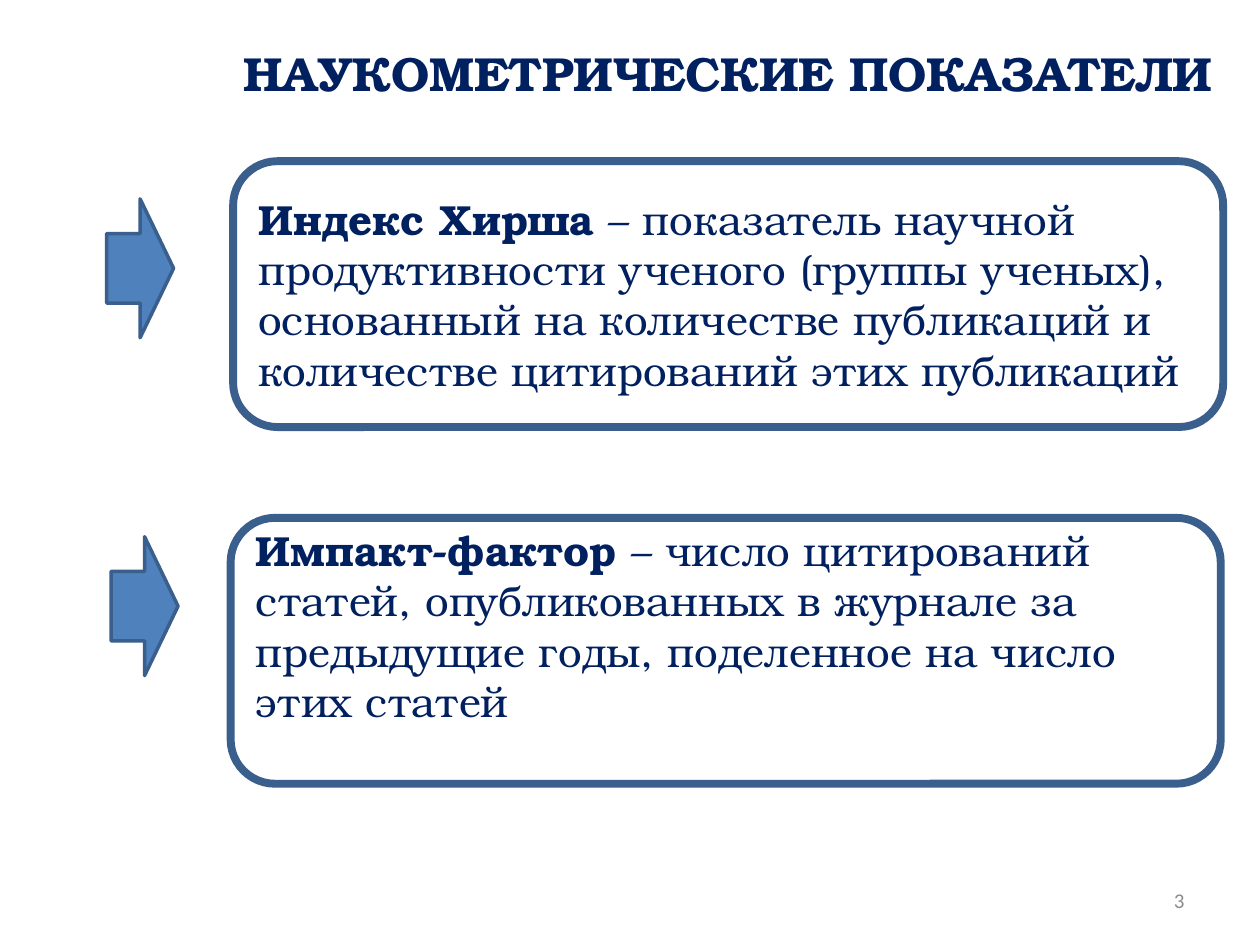
from pptx import Presentation
from pptx.dml.color import RGBColor
from pptx.enum.shapes import MSO_SHAPE
from pptx.enum.text import MSO_ANCHOR, MSO_AUTO_SIZE, PP_ALIGN
from pptx.util import Cm, Pt

NAVY = RGBColor(0x00, 0x20, 0x60)
BLUE = RGBColor(0x4F, 0x81, 0xBD)
EDGE = RGBColor(0x3A, 0x5F, 0x8C)
GREY = RGBColor(0x8C, 0x8C, 0x8C)
WHITE = RGBColor(0xFF, 0xFF, 0xFF)

SERIF = "TeX Gyre Bonum"
TITLE_FONT = {"name": SERIF, "size": Pt(27.3), "bold": True}
TERM_FONT = {"name": SERIF, "size": Pt(24), "bold": True}
BODY_FONT = {"name": SERIF, "size": Pt(24), "bold": False}
NUMBER_FONT = {"name": "Calibri", "size": Pt(12)}

INDICATORS = [
    {
        "term": "Индекс Хирша ",
        "meaning": "– показатель научной продуктивности ученого (группы ученых), "
        "основанный на количестве публикаций и количестве цитирований этих публикаций",
        "arrow": (2.15, 4.01),
        "card": (4.7, 3.25),
        "bottom": 0.13,
    },
    {
        "term": "Импакт-фактор ",
        "meaning": "– число цитирований статей, опубликованных в журнале "
        "за предыдущие годы, поделенное на число этих статей",
        "arrow": (2.24, 10.82),
        "card": (4.65, 10.44),
        "bottom": 1.15,
    },
]


def apply_format(target, values):
    for name, value in values.items():
        setattr(target, name, value)


def place(shape, left, top, width, height):
    apply_format(shape, {"left": Cm(left), "top": Cm(top),
                         "width": Cm(width), "height": Cm(height)})


def add_span(para, text, font, color):
    span = para.add_run()
    span.text = text
    apply_format(span.font, font)
    span.font.color.rgb = color


def write_line(box, text, font, color, anchor, alignment):
    frame = box.text_frame
    apply_format(frame, {"word_wrap": True, "auto_size": MSO_AUTO_SIZE.NONE,
                         "vertical_anchor": anchor})
    para = frame.paragraphs[0]
    para.alignment = alignment
    add_span(para, text, font, color)


def add_title(page, text):
    title = page.shapes.title
    place(title, 3.96, 0.76, 21.44, 1.75)
    write_line(title, text, TITLE_FONT, NAVY, MSO_ANCHOR.TOP, PP_ALIGN.CENTER)


def add_page_number(page, text):
    box = page.shapes.add_textbox(Cm(18.2), Cm(17.65), Cm(5.93), Cm(1.01))
    write_line(box, text, NUMBER_FONT, GREY, MSO_ANCHOR.MIDDLE, PP_ALIGN.RIGHT)


def add_outlined_shape(page, kind, position, size, fill, weight):
    left, top = position
    width, height = size
    shape = page.shapes.add_shape(kind, Cm(left), Cm(top), Cm(width), Cm(height))
    shape.shadow.inherit = False
    shape.fill.solid()
    shape.fill.fore_color.rgb = fill
    shape.line.color.rgb = EDGE
    shape.line.width = Pt(weight)
    return shape


def add_indicator(page, indicator):
    add_outlined_shape(page, MSO_SHAPE.RIGHT_ARROW, indicator["arrow"],
                       (1.35, 2.8), BLUE, 2)
    card = add_outlined_shape(page, MSO_SHAPE.ROUNDED_RECTANGLE, indicator["card"],
                              (19.96, 5.36), WHITE, 4.5)
    frame = card.text_frame
    apply_format(frame, {"word_wrap": True, "vertical_anchor": MSO_ANCHOR.MIDDLE,
                         "margin_bottom": Cm(indicator["bottom"])})
    para = frame.paragraphs[0]
    para.alignment = PP_ALIGN.LEFT
    add_span(para, indicator["term"], TERM_FONT, NAVY)
    add_span(para, indicator["meaning"], BODY_FONT, NAVY)


def main():
    deck = Presentation()
    apply_format(deck, {"slide_width": Cm(25.4), "slide_height": Cm(19.05)})
    page = deck.slides.add_slide(deck.slide_layouts[5])
    add_title(page, "НАУКОМЕТРИЧЕСКИЕ ПОКАЗАТЕЛИ")
    for indicator in INDICATORS:
        add_indicator(page, indicator)
    add_page_number(page, "3")
    deck.save("out.pptx")


if __name__ == "__main__":
    main()
